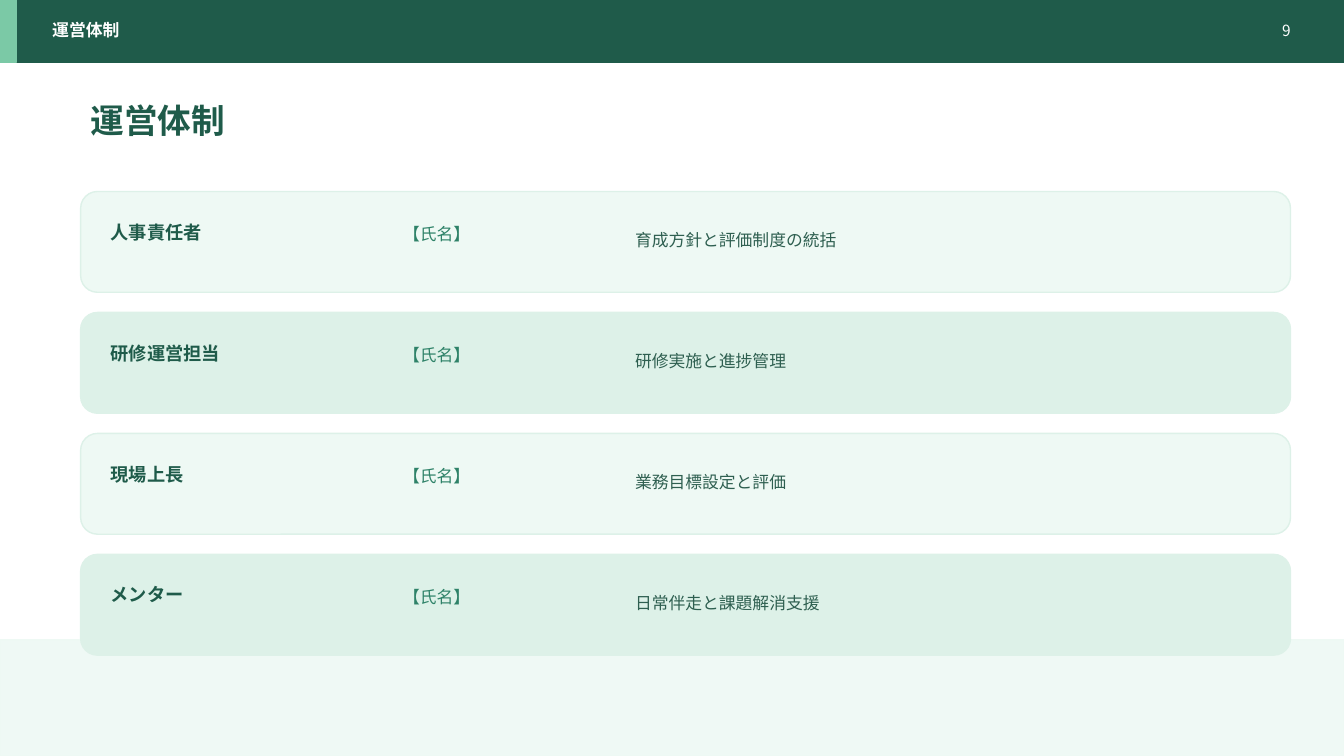
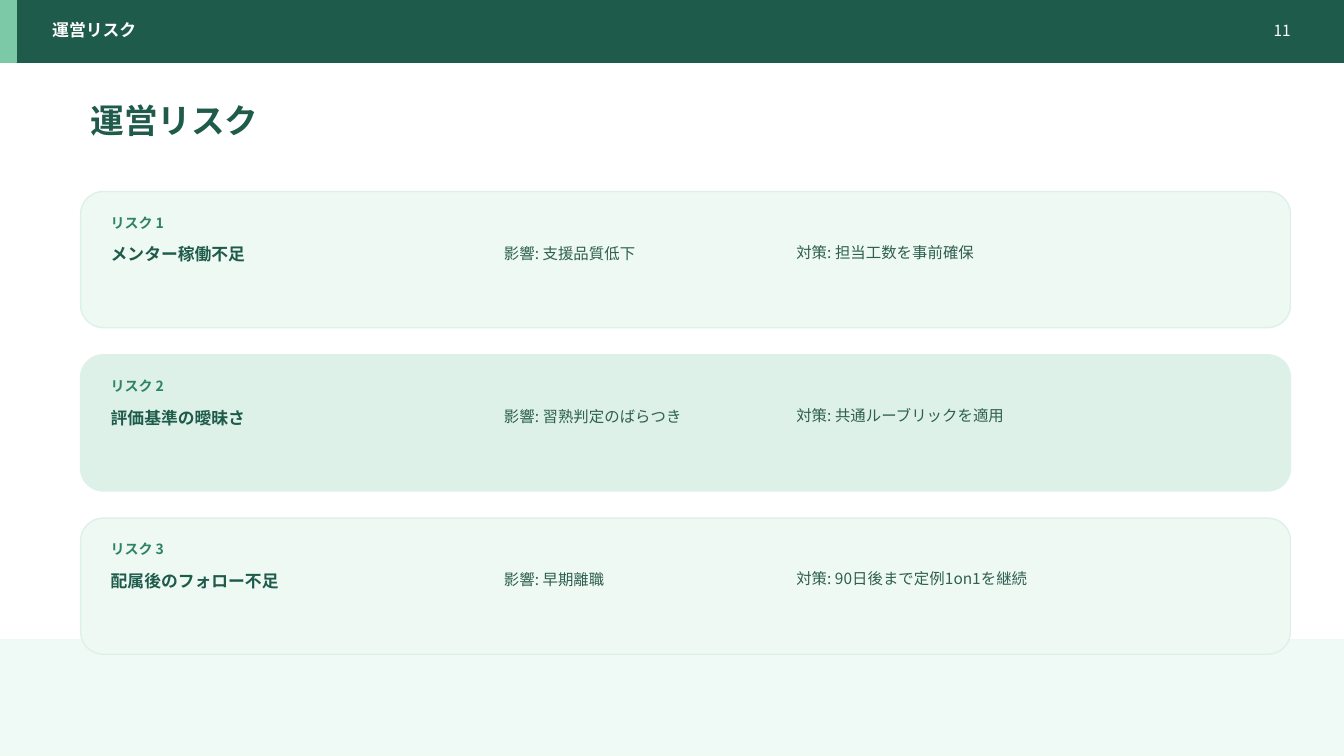
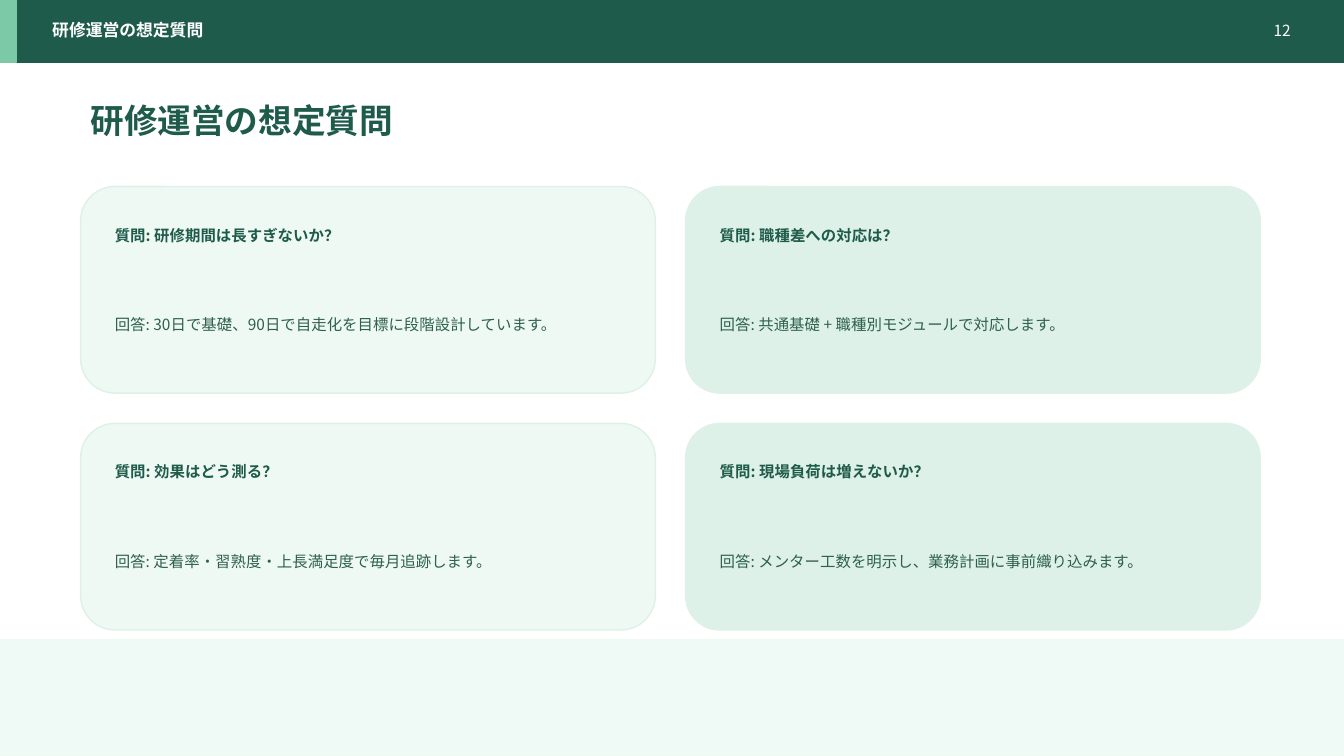
from pptx import Presentation
from pptx.dml.color import RGBColor
from pptx.enum import shapes, text
from pptx.oxml import ns
from pptx.util import Inches, Pt
from lxml import etree

FONT = "Noto Sans CJK JP"
DARK, MEDIUM, BODY = "1F5B4A", "2E8268", "2E5F50"
ACCENT, PALE, SOFT, WHITE = "7BC9A6", "EEF9F4", "DDF1E8", "FFFFFF"
CARD_FILLS = [PALE, SOFT]
RECTANGLE = shapes.MSO_SHAPE.RECTANGLE
ROUNDED = shapes.MSO_SHAPE.ROUNDED_RECTANGLE
MIDDLE, TOP = text.MSO_ANCHOR.MIDDLE, text.MSO_ANCHOR.TOP
LEFT, RIGHT = text.PP_ALIGN.LEFT, text.PP_ALIGN.RIGHT


def add_box(slide, kind, left, top, width, height, fill, line):
    shape = slide.shapes.add_shape(
        kind, Inches(left), Inches(top), Inches(width), Inches(height))
    shape.shadow.inherit = False
    shape.fill.solid()
    shape.fill.fore_color.rgb = RGBColor.from_string(fill)
    shape.line.color.rgb = RGBColor.from_string(line)
    shape.line.width = Pt(1)
    return shape


def add_text(slide, words, left, top, width, height, size, color,
             bold=False, anchor=MIDDLE, align=LEFT):
    box = slide.shapes.add_textbox(
        Inches(left), Inches(top), Inches(width), Inches(height))
    frame = box.text_frame
    frame.word_wrap = True
    frame.vertical_anchor = anchor
    paragraph = frame.paragraphs[0]
    paragraph.alignment = align
    run = paragraph.add_run()
    run.text = words
    run.font.name = FONT
    run.font.size = Pt(size)
    run.font.bold = bold
    run.font.color.rgb = RGBColor.from_string(color)
    east_asian = etree.SubElement(run.font._element, ns.qn("a:ea"))
    east_asian.set("typeface", FONT)


presentation = Presentation()
presentation.slide_width = Inches(13.33)
presentation.slide_height = Inches(7.5)

# Shared bands, header, page number and title
slides = []
for title, number in [("運営体制", 9), ("運営リスク", 11), ("研修運営の想定質問", 12)]:
    slide = presentation.slides.add_slide(presentation.slide_layouts[6])
    slide.background.fill.solid()
    slide.background.fill.fore_color.rgb = RGBColor.from_string(WHITE)
    bottom_band = add_box(slide, RECTANGLE, 0, 6.35, 13.33, 1.15, PALE, PALE)
    band_color = bottom_band.fill._xPr.find(ns.qn("a:solidFill"))[0]
    etree.SubElement(band_color, ns.qn("a:alpha")).set("val", "90000")
    add_box(slide, RECTANGLE, 0, 0, 13.33, 0.62, DARK, DARK)
    add_box(slide, RECTANGLE, 0, 0, 0.16, 0.62, ACCENT, ACCENT)
    add_text(slide, title, 0.42, 0.17, 8.8, 0.26, 12, WHITE, bold=True)
    add_text(slide, str(number), 12.15, 0.17, 0.75, 0.26, 11, WHITE, align=RIGHT)
    add_text(slide, title, 0.8, 0.95, 11.4, 0.48, 24, DARK, bold=True)
    slides.append(slide)
team_slide, risk_slide, question_slide = slides

# Team roles
roles = [
    ("人事責任者", "育成方針と評価制度の統括"),
    ("研修運営担当", "研修実施と進捗管理"),
    ("現場上長", "業務目標設定と評価"),
    ("メンター", "日常伴走と課題解消支援"),
]
for index, (role, duty) in enumerate(roles):
    top = 1.9 + 1.2 * index
    add_box(team_slide, ROUNDED, 0.8, top, 12, 1, CARD_FILLS[index % 2], SOFT)
    add_text(team_slide, role, 1, top + 0.28, 2.7, 0.24, 13, DARK, bold=True)
    add_text(team_slide, "【氏名】", 3.9, top + 0.3, 2.1, 0.24, 12, MEDIUM)
    add_text(team_slide, duty, 6.2, top + 0.25, 6.2, 0.45, 12, BODY)

# Risks
risks = [
    ("メンター稼働不足", "支援品質低下", "担当工数を事前確保"),
    ("評価基準の曖昧さ", "習熟判定のばらつき", "共通ルーブリックを適用"),
    ("配属後のフォロー不足", "早期離職", "90日後まで定例1on1を継続"),
]
for index, (risk, impact, action) in enumerate(risks):
    top = 1.9 + 1.62 * index
    detail_top = top + 0.46
    add_box(risk_slide, ROUNDED, 0.8, top, 12, 1.35, CARD_FILLS[index % 2], SOFT)
    add_text(risk_slide, f"リスク {index + 1}", 1, top + 0.2, 1.2, 0.22, 10, MEDIUM, bold=True)
    add_text(risk_slide, risk, 1, detail_top, 3.7, 0.32, 12, DARK, bold=True)
    add_text(risk_slide, f"影響: {impact}", 4.9, detail_top, 2.8, 0.3, 11, BODY)
    add_text(risk_slide, f"対策: {action}", 7.8, detail_top, 4.8, 0.58, 11, BODY, anchor=TOP)

# Questions and answers
questions = [
    ("研修期間は長すぎないか？", "30日で基礎、90日で自走化を目標に段階設計しています。"),
    ("職種差への対応は？", "共通基礎 + 職種別モジュールで対応します。"),
    ("効果はどう測る？", "定着率・習熟度・上長満足度で毎月追跡します。"),
    ("現場負荷は増えないか？", "メンター工数を明示し、業務計画に事前織り込みます。"),
]
for index, (question, answer) in enumerate(questions):
    row, column = divmod(index, 2)
    left, top = 0.8 + 6 * column, 1.85 + 2.35 * row
    add_box(question_slide, ROUNDED, left, top, 5.7, 2.05, CARD_FILLS[column], SOFT)
    add_text(question_slide, f"質問: {question}", left + 0.24, top + 0.24, 5.2, 0.48, 11, DARK, bold=True)
    add_text(question_slide, f"回答: {answer}", left + 0.24, top + 0.82, 5.2, 1.1, 11, BODY)

presentation.save("out.pptx")
